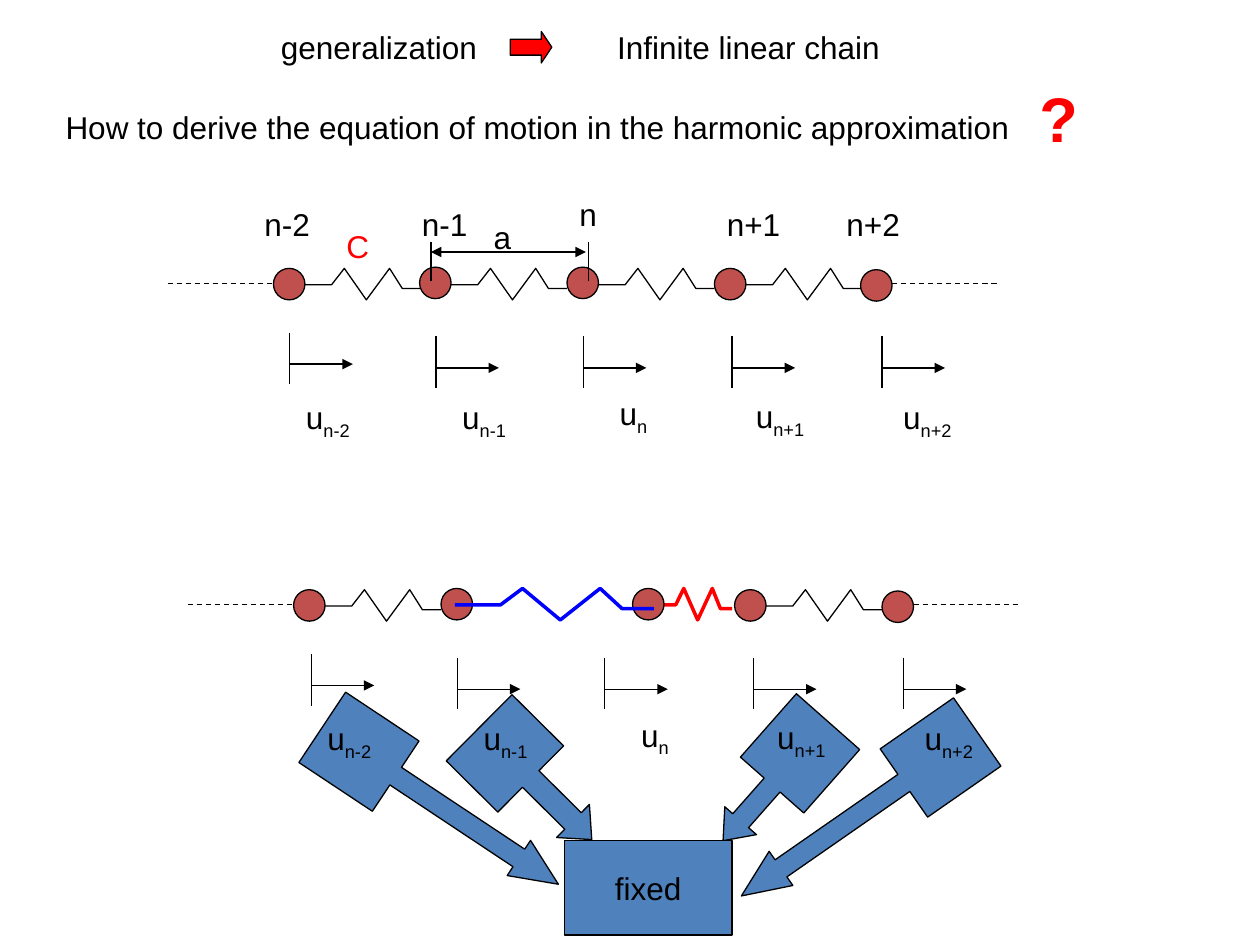
"""Build a slide on the infinite linear chain in the harmonic approximation."""
from lxml.etree import SubElement
from pptx import Presentation
from pptx.dml.color import RGBColor
from pptx.enum.dml import MSO_LINE
from pptx.enum.shapes import MSO_CONNECTOR, MSO_SHAPE
from pptx.enum.text import MSO_ANCHOR, MSO_AUTO_SIZE, PP_ALIGN
from pptx.oxml.ns import qn
from pptx.util import Inches, Pt

COLORS = {
    "black": "000000",
    "red": "FF0000",
    "blue": "0000FF",
    "ball": "C0504D",
    "box": "4F81BD",
}
FONT = "Arial"
BALL_SIZE = 0.25
BALL_TOPS = (2.13, 2.12, 2.12, 2.13, 2.14)
ROW_SHIFT = (0.17, 2.55)
SPRING_PROFILE = (
    (0, 0.52), (0.23, 0.52), (0.34, 0), (0.53, 1),
    (0.73, 0), (0.84, 0.64), (1, 0.64),
)
DISPLACEMENTS = (
    (2.3, 2.64, 2.33, 3.11, "n-2"),
    (3.46, 2.67, 3.57, 3.11, "n-1"),
    (4.63, 2.67, 4.82, 3.08, "n"),
    (5.81, 2.67, 5.9, 3.1, "n+1"),
    (7, 2.67, 7.07, 3.11, "n+2"),
)
CALLOUTS = (
    (6.49, 5.32, 0.66, 2.28, 55.2, (0.25, 0.25, 0.58, 0.311)),
    (5.82, 5.57, 0.67, 1.26, 41.4, (0.25, 0.25, 0.315, 0.533)),
    (3.88, 5.59, 0.74, 1.26, 314.8, (0.25, 0.25, 0.283, 0.458)),
    (3.16, 5.27, 0.67, 2.25, 303.6, (0.25, 0.25, 0.562, 0.311)),
)
LABELS = (
    ("generalization", 2.13, 0.17, 1.85),
    ("Infinite linear chain", 4.8, 0.17, 2.4),
    ("n-2", 2, 1.58, 0.65),
    ("n-1", 3.25, 1.58, 0.65),
    ("n", 4.5, 1.5, 0.4),
    ("n+1", 5.67, 1.58, 0.7),
    ("n+2", 6.62, 1.58, 0.7),
    ("a", 3.82, 1.68, 0.4),
)


def rgb(name):
    """Return the named colour."""
    return RGBColor.from_string(COLORS[name])


def add_span(para, text, size=18, color="black", bold=False):
    """Add one formatted run to a paragraph."""
    span = para.add_run()
    span.text = text
    span.font.name = FONT
    span.font.size = Pt(size)
    span.font.bold = bold
    span.font.color.rgb = rgb(color)
    return span


def add_text(page, text, left, top, width, height=0.4, **style):
    """Add a text box and return its paragraph."""
    box = page.shapes.add_textbox(
        Inches(left), Inches(top), Inches(width), Inches(height))
    frame = box.text_frame
    frame.word_wrap = True
    frame.auto_size = MSO_AUTO_SIZE.SHAPE_TO_FIT_TEXT
    para = frame.paragraphs[0]
    add_span(para, text, **style)
    return para


def add_title(page, text):
    """Place the question in the title placeholder."""
    title = page.shapes.title
    title.left, title.top = Inches(0.42), Inches(0.81)
    title.width, title.height = Inches(7.8), Inches(0.4)
    frame = title.text_frame
    frame.auto_size = MSO_AUTO_SIZE.NONE
    frame.vertical_anchor = MSO_ANCHOR.TOP
    para = frame.paragraphs[0]
    para.alignment = PP_ALIGN.LEFT
    add_span(para, text)


def add_figure(page, kind, left, top, width, height, fill, adjustments=()):
    """Add a filled preset shape with a thin black outline."""
    figure = page.shapes.add_shape(
        kind, Inches(left), Inches(top), Inches(width), Inches(height))
    figure.shadow.inherit = False
    figure.fill.solid()
    figure.fill.fore_color.rgb = rgb(fill)
    figure.line.color.rgb = rgb("black")
    figure.line.width = Pt(0.75)
    for index, value in enumerate(adjustments):
        figure.adjustments[index] = value
    return figure


def add_line(page, start, end, dashed=False, arrows=()):
    """Add a straight line, with arrowheads at the named ends."""
    line = page.shapes.add_connector(
        MSO_CONNECTOR.STRAIGHT, *map(Inches, (*start, *end)))
    line.line.color.rgb = rgb("black")
    line.line.width = Pt(0.75)
    if dashed:
        line.line.dash_style = MSO_LINE.DASH
    outline = line.line._get_or_add_ln()
    for arrow in arrows:
        SubElement(outline, qn(f"a:{arrow}"), type="triangle")
    SubElement(line._element.spPr, qn("a:effectLst"))


def add_spring(page, left, top, width=0.92, color="black", weight=0.75):
    """Add a zigzag spring stretched to the given width."""
    points = [(Inches(left + x * width), Inches(top + y * BALL_SIZE))
              for x, y in SPRING_PROFILE]
    builder = page.shapes.build_freeform(*points[0])
    builder.add_line_segments(points[1:], close=False)
    spring = builder.convert_to_shape()
    spring.shadow.inherit = False
    spring.fill.background()
    spring.line.color.rgb = rgb(color)
    spring.line.width = Pt(weight)


def add_balls(page, lefts, drop=0):
    """Add a row of atoms with dashed lines leading away from both ends."""
    for left, top in zip(lefts, BALL_TOPS):
        add_figure(page, MSO_SHAPE.OVAL, left, top + drop,
                   BALL_SIZE, BALL_SIZE, "ball")
    level = 2.25 + drop
    right = lefts[-1] + BALL_SIZE
    add_line(page, (lefts[0] - 0.84, level), (lefts[0], level), dashed=True)
    add_line(page, (right, level), (right + 0.84, level), dashed=True)


def add_displacements(page, shift=0, drop=0):
    """Add the displacement arrow and symbol of every atom in a row."""
    for x, y, left, top, index in DISPLACEMENTS:
        x, y = x + shift, y + drop
        add_line(page, (x, y), (x, y + 0.41))
        add_line(page, (x, y + 0.25), (x + 0.5, y + 0.25), arrows=["tailEnd"])
        para = add_text(page, "u", left + shift, top + drop, 0.77)
        subscript = add_span(para, index)
        subscript.font._element.set("baseline", "-25000")


def add_spacing(page):
    """Add the dimension line of the lattice spacing."""
    for x in (3.42, 4.67):
        add_line(page, (x, 1.92), (x, 2.23))
    add_line(page, (3.42, 2), (4.65, 2), arrows=["headEnd", "tailEnd"])


def add_fixed_box(page):
    """Add the box that marks the fixed displacements."""
    box = add_figure(page, MSO_SHAPE.RECTANGLE, 4.48, 6.67, 1.33, 0.75, "box")
    frame = box.text_frame
    frame.word_wrap = False
    frame.vertical_anchor = MSO_ANCHOR.MIDDLE
    para = frame.paragraphs[0]
    para.alignment = PP_ALIGN.CENTER
    add_span(para, "fixed")


def main():
    """Build and save the deck."""
    deck = Presentation()
    deck.slide_width, deck.slide_height = Inches(10), Inches(7.5)
    page = deck.slides.add_slide(deck.slide_layouts[5])
    shift, drop = ROW_SHIFT

    for *place, angle, adjustments in CALLOUTS:
        callout = add_figure(page, MSO_SHAPE.DOWN_ARROW_CALLOUT, *place,
                             "box", adjustments)
        callout.rotation = angle

    add_title(page, "How to derive the equation of motion "
                    "in the harmonic approximation")
    add_text(page, "?", 8.15, 0.58, 0.6, 0.7, size=36, color="red", bold=True)
    add_figure(page, MSO_SHAPE.RIGHT_ARROW, 4.05, 0.25, 0.33, 0.25,
               "red", (0.5, 0.333))
    for label in LABELS:
        add_text(page, *label)
    add_text(page, "C", 2.65, 1.75, 0.45, color="red")

    for left in (2.42, 3.58, 4.75, 5.92):
        add_spring(page, left, 2.13)
    add_balls(page, (2.17, 3.33, 4.5, 5.67, 6.83))
    add_spacing(page)
    add_displacements(page)

    for left in (2.58, 6.08):
        add_spring(page, left, 2.13 + drop)
    add_spring(page, 5.23, 4.67, 0.58, "red", 2)
    add_balls(page, (2.33, 3.5, 5.02, 5.83, 7), drop)
    add_spring(page, 3.61, 4.67, 1.58, "blue", 2)
    add_displacements(page, shift, drop)
    add_fixed_box(page)
    deck.save("out.pptx")


if __name__ == "__main__":
    main()
